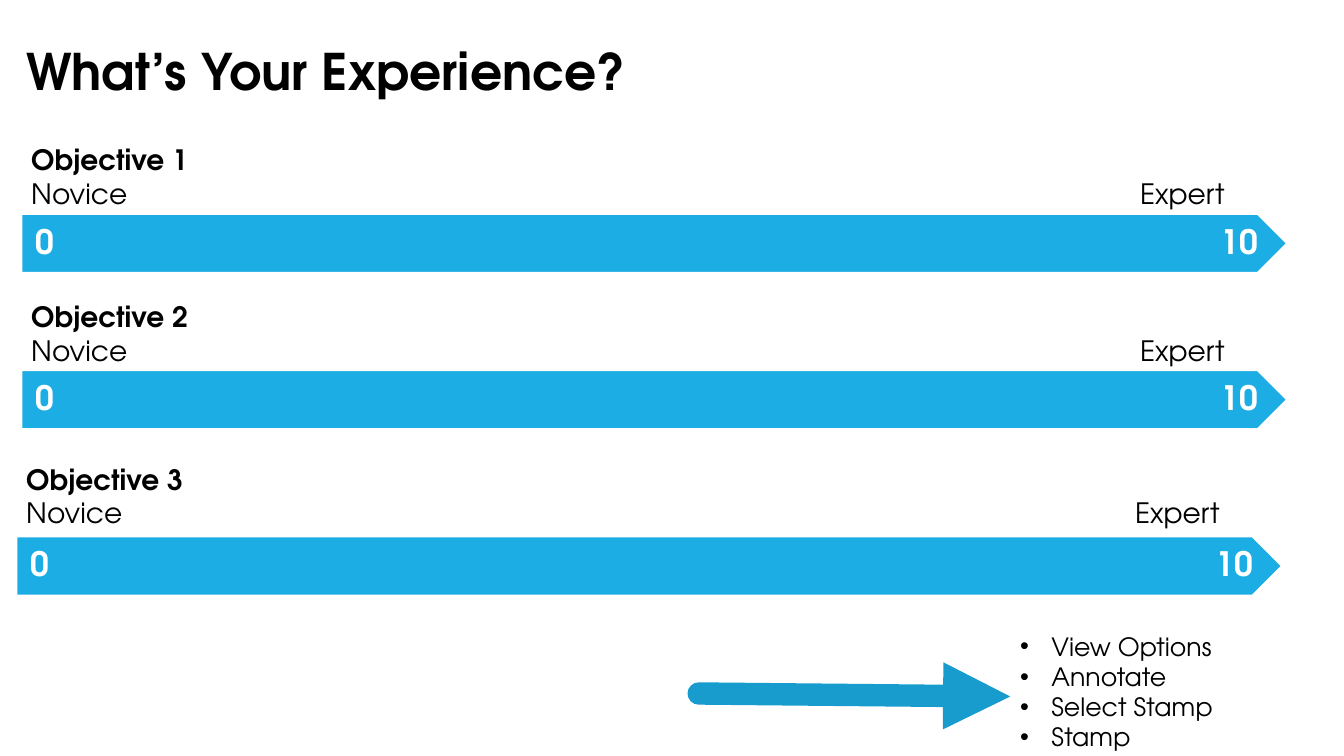
"""Build the experience slide with three novice-to-expert scales."""
from dataclasses import dataclass

import lxml.etree
import pptx
import pptx.dml.color
import pptx.enum.shapes
import pptx.enum.text
import pptx.oxml.ns
import pptx.shapes.autoshape
import pptx.shapes.connector
import pptx.slide
import pptx.text.text
import pptx.util

EMU_PER_PX = 9144
NOVICE_TAB = 1100
SCORE_TAB = 1213


@dataclass(frozen=True)
class Theme:
    """Colours, font and type sizes of the slide."""

    font: str = "TeX Gyre Adventor"
    ink: str = "000000"
    paper: str = "FFFFFF"
    bar: str = "1CADE4"
    arrow: str = "189CCE"
    title_size: int = 36
    score_size: int = 24
    label_size: int = 20
    list_size: int = 18
    outline: float = 1.75
    arrow_width: int = 16


@dataclass(frozen=True)
class Box:
    """A rectangle in px."""

    left: int
    top: int
    width: int
    height: int

    def emu(self) -> tuple[int, int, int, int]:
        """Return the rectangle in EMU."""
        return px(self.left), px(self.top), px(self.width), px(self.height)


@dataclass(frozen=True)
class Scale:
    """One objective with its label box and its arrow bar."""

    name: str
    left: int
    label_top: int
    label_height: int
    bar_top: int


THEME = Theme()
SCALES = (
    Scale("Objective 1", 21, 150, 63, 212),
    Scale("Objective 2", 21, 306, 63, 367),
    Scale("Objective 3", 16, 471, 59, 532),
)
STEPS = ("View Options", "Annotate", "Select Stamp", "Stamp")


def px(length: int) -> pptx.util.Emu:
    """Turn px into EMU."""
    return pptx.util.Emu(length * EMU_PER_PX)


def rgb(colour: str) -> pptx.dml.color.RGBColor:
    """Return a colour object for a hex string."""
    return pptx.dml.color.RGBColor.from_string(colour)


def add_xml(parent: lxml.etree.ElementBase, tag: str, **attributes: str) -> lxml.etree.ElementBase:
    """Append a drawing element to a parent."""
    return lxml.etree.SubElement(parent, pptx.oxml.ns.qn(tag), attributes)


def format_paragraph(paragraph: pptx.text.text._Paragraph, size: int, colour: str, bold: bool) -> None:
    """Left-align a paragraph and format its runs."""
    paragraph.alignment = pptx.enum.text.PP_ALIGN.LEFT
    for run in paragraph.runs:
        run.font.name = THEME.font
        run.font.size = pptx.util.Pt(size)
        run.font.bold = bold
        run.font.color.rgb = rgb(colour)


def add_tab(paragraph: pptx.text.text._Paragraph, position: int, alignment: str) -> None:
    """Give a paragraph one tab stop."""
    tabs = add_xml(paragraph._p.get_or_add_pPr(), "a:tabLst")
    add_xml(tabs, "a:tab", pos=str(px(position)), algn=alignment)


def add_title(slide: pptx.slide.Slide) -> None:
    """Place and format the title."""
    title = slide.shapes.title
    title.left, title.top, title.width, title.height = Box(16, 10, 1206, 95).emu()
    frame = title.text_frame
    frame.text = "What’s Your Experience?"
    frame.auto_size = pptx.enum.text.MSO_AUTO_SIZE.NONE
    frame.vertical_anchor = pptx.enum.text.MSO_ANCHOR.BOTTOM
    format_paragraph(frame.paragraphs[0], THEME.title_size, THEME.ink, True)


def add_label(slide: pptx.slide.Slide, scale: Scale) -> None:
    """Write the objective and the names of the scale's ends."""
    box = Box(scale.left, scale.label_top, 1206, scale.label_height)
    frame = slide.shapes.add_textbox(*box.emu()).text_frame
    frame.word_wrap = True
    frame.vertical_anchor = pptx.enum.text.MSO_ANCHOR.BOTTOM
    frame.text = f"{scale.name}\nNovice\tExpert"
    heading, ends = frame.paragraphs
    format_paragraph(heading, THEME.label_size, THEME.ink, True)
    format_paragraph(ends, THEME.label_size, THEME.ink, False)
    add_tab(ends, NOVICE_TAB, "l")


def add_bar(slide: pptx.slide.Slide, scale: Scale) -> None:
    """Draw the arrow bar grouped with its scores."""
    group = slide.shapes.add_group_shape()
    bar = group.shapes.add_shape(
        pptx.enum.shapes.MSO_SHAPE.PENTAGON, *Box(scale.left, scale.bar_top, 1256, 59).emu()
    )
    bar.shadow.inherit = False
    bar.fill.solid()
    bar.fill.fore_color.rgb = rgb(THEME.bar)
    bar.line.color.rgb = rgb(THEME.paper)
    bar.line.width = pptx.util.Pt(THEME.outline)

    scores = group.shapes.add_textbox(*Box(scale.left, scale.bar_top, 1241, 59).emu())
    frame = scores.text_frame
    frame.word_wrap = True
    frame.vertical_anchor = pptx.enum.text.MSO_ANCHOR.MIDDLE
    frame.margin_left, frame.margin_right = px(14), px(4)
    frame.margin_top = frame.margin_bottom = px(7)
    frame.text = "0\t10"
    paragraph = frame.paragraphs[0]
    paragraph.line_spacing = 0.9
    format_paragraph(paragraph, THEME.score_size, THEME.paper, True)
    add_tab(paragraph, SCORE_TAB, "r")


def add_steps(slide: pptx.slide.Slide) -> None:
    """Write the bulleted stamping steps."""
    frame = slide.shapes.add_textbox(*Box(1002, 621, 214, 131).emu()).text_frame
    frame.word_wrap = False
    frame.auto_size = pptx.enum.text.MSO_AUTO_SIZE.SHAPE_TO_FIT_TEXT
    frame.text = "\n".join(STEPS)
    for paragraph in frame.paragraphs:
        format_paragraph(paragraph, THEME.list_size, THEME.ink, False)
        properties = paragraph._p.get_or_add_pPr()
        properties.set("marL", str(px(31)))
        properties.set("indent", str(px(-31)))
        add_xml(properties, "a:buFont", typeface="Arial")
        add_xml(properties, "a:buChar", char="•")


def add_arrow(slide: pptx.slide.Slide) -> None:
    """Draw the round-capped arrow to the steps."""
    arrow = slide.shapes.add_connector(
        pptx.enum.shapes.MSO_CONNECTOR.STRAIGHT, px(693), px(688), px(1002), px(691)
    )
    arrow.line.color.rgb = rgb(THEME.arrow)
    arrow.line.width = pptx.util.Pt(THEME.arrow_width)
    line = arrow.line._get_or_add_ln()
    line.set("cap", "rnd")
    add_xml(line, "a:tailEnd", type="triangle")
    add_xml(arrow._element.spPr, "a:effectLst")


def main() -> None:
    """Build and save the presentation."""
    presentation = pptx.Presentation()
    presentation.slide_width, presentation.slide_height = px(1333), px(750)
    slide = presentation.slides.add_slide(presentation.slide_layouts.get_by_name("Title Only"))
    add_title(slide)
    add_steps(slide)
    add_arrow(slide)
    for scale in SCALES:
        add_bar(slide, scale)
        add_label(slide, scale)
    presentation.save("out.pptx")


if __name__ == "__main__":
    main()
